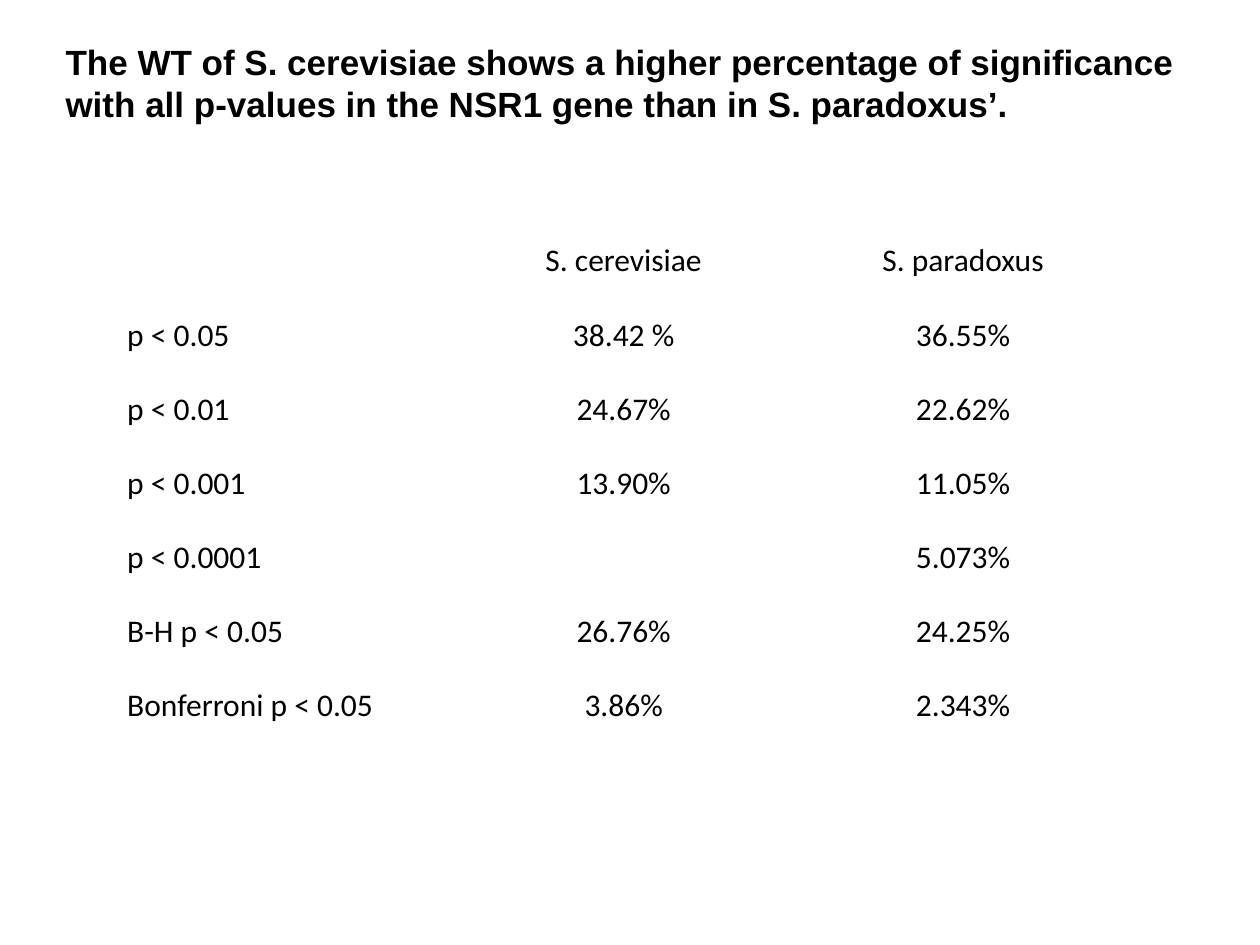
from pptx import Presentation
from pptx.dml.color import RGBColor
from pptx.enum.text import MSO_ANCHOR, MSO_AUTO_SIZE, PP_ALIGN
from pptx.util import Inches, Pt

# Content
TITLE = ("The WT of S. cerevisiae shows a higher percentage of significance "
         "with all p-values in the NSR1 gene than in S. paradoxus’.")
ROWS = [
    ("", "S. cerevisiae", "S. paradoxus"),
    ("p < 0.05", "38.42 %", "36.55%"),
    ("p < 0.01", "24.67%", "22.62%"),
    ("p < 0.001", "13.90%", "11.05%"),
    ("p < 0.0001", "", "5.073%"),
    ("B-H p < 0.05", "26.76%", "24.25%"),
    ("Bonferroni p < 0.05", "3.86%", "2.343%"),
]
TEXT_COLOR = "000000"


def format_paragraph(paragraph, font_name, size, color, align, bold=False):
    paragraph.alignment = align
    font = paragraph.font
    font.name, font.size, font.bold = font_name, Pt(size), bold
    font.color.rgb = RGBColor.from_string(color)


presentation = Presentation()
presentation.slide_width, presentation.slide_height = Inches(10), Inches(7.5)
slide = presentation.slides.add_slide(presentation.slide_layouts[5])

# Title
title = slide.shapes.title
title.left, title.top = Inches(0.42), Inches(0.27)
title.width, title.height = Inches(9.32), Inches(0.77)
frame = title.text_frame
frame.text = TITLE
frame.word_wrap = True
frame.auto_size = MSO_AUTO_SIZE.SHAPE_TO_FIT_TEXT
frame.vertical_anchor = MSO_ANCHOR.TOP
format_paragraph(frame.paragraphs[0], "Arial", 20, TEXT_COLOR, PP_ALIGN.LEFT, bold=True)

# Table of significance percentages
table = slide.shapes.add_table(
    len(ROWS), len(ROWS[0]),
    Inches(0.91), Inches(1.87), Inches(8.08), Inches(4.12)).table
table.first_row = table.horz_banding = False
for row_index, row in enumerate(ROWS):
    for column_index, text in enumerate(row):
        cell = table.cell(row_index, column_index)
        cell.fill.background()
        cell.text = text
        align = PP_ALIGN.CENTER if column_index else PP_ALIGN.LEFT
        format_paragraph(cell.text_frame.paragraphs[0], "Calibri", 18, TEXT_COLOR, align)

presentation.save("out.pptx")
